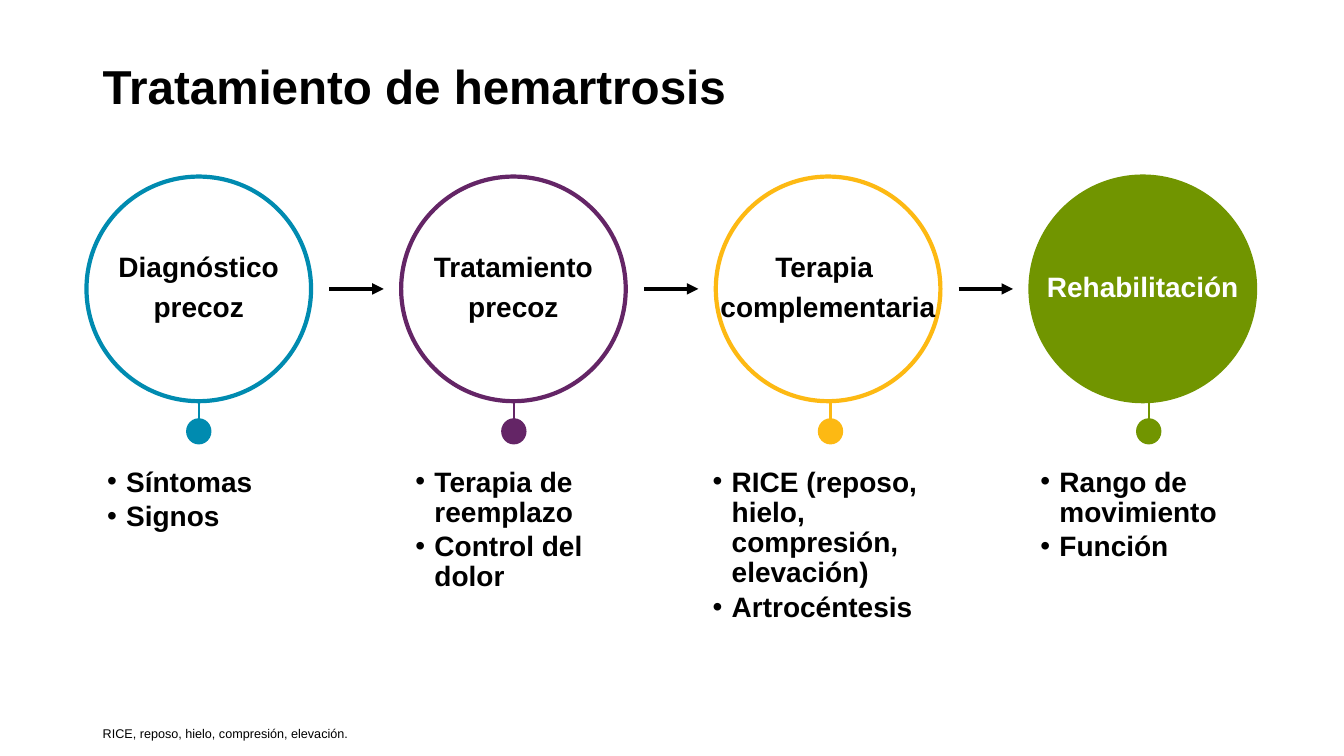
from lxml import etree
from pptx import Presentation
from pptx.dml.color import RGBColor
from pptx.enum.shapes import MSO_CONNECTOR, MSO_SHAPE
from pptx.enum.text import MSO_ANCHOR, PP_ALIGN
from pptx.oxml.ns import qn
from pptx.util import Cm, Pt

OVAL, RECTANGLE = MSO_SHAPE.OVAL, MSO_SHAPE.RECTANGLE
STRAIGHT = MSO_CONNECTOR.STRAIGHT
TOP, MIDDLE, BOTTOM = MSO_ANCHOR.TOP, MSO_ANCHOR.MIDDLE, MSO_ANCHOR.BOTTOM
LEFT, CENTER = PP_ALIGN.LEFT, PP_ALIGN.CENTER

# Content
TITLE = "Tratamiento de hemartrosis"
FOOTNOTE = "RICE, reposo, hielo, compresión, elevación."
# Lengths in cm: stem is the marker's centre, list_left and list_width its text
STEPS = [
    dict(label=["Diagnóstico", "precoz"], color="008BB0", filled=False,
         stem=5.01, list_left=2.34, list_width=5.66,
         items=["Síntomas", "Signos"]),
    dict(label=["Tratamiento", "precoz"], color="642566", filled=False,
         stem=12.95, list_left=10.11, list_width=5.66,
         items=["Terapia de reemplazo", "Control del dolor"]),
    dict(label=["Terapia ", "complementaria"], color="FDB913", filled=False,
         stem=20.93, list_left=17.6, list_width=6.65,
         items=["RICE (reposo, hielo, compresión, elevación)", "Artrocéntesis"]),
    dict(label=["Rehabilitación"], color="719500", filled=True,
         stem=28.95, list_left=25.86, list_width=5.66,
         items=["Rango de movimiento", "Función"]),
]

THEME = dict(font="Arial", text="000000", paper="FFFFFF",
             title=34, body=20, footnote=9)

# Layout in cm
CIRCLE_LEFT, CIRCLE_TOP, DIAMETER, PITCH = 2.18, 4.45, 5.66, 7.93
ARROW_GAP, ARROW_LENGTH = 0.46, 1.37
STEM_TOP, STEM_BOTTOM = 8.8, 10.8
DOT_TOP, DOT_WIDTH, DOT_HEIGHT = 10.54, 0.64, 0.66
LIST_TOP, LIST_HEIGHT = 11.43, 3.78
PADDING, BULLET_INDENT = 0.36, 0.48

presentation = Presentation()
presentation.slide_width, presentation.slide_height = Cm(33.87), Cm(19.05)
slide = presentation.slides.add_slide(presentation.slide_layouts[6])


def write(shape, lines, size, color=THEME["text"], bold=True, anchor=MIDDLE,
          align=LEFT, insets=(0.25, 0.13, 0.25, 0.13), wrap=True,
          spacing=None, after=0, bullets=False):
    frame = shape.text_frame
    frame.text = "\n".join(lines)
    frame.word_wrap, frame.vertical_anchor = wrap, anchor
    (frame.margin_left, frame.margin_top,
     frame.margin_right, frame.margin_bottom) = map(Cm, insets)
    for paragraph in frame.paragraphs:
        paragraph.alignment = align
        paragraph.line_spacing = spacing
        paragraph.space_after = Pt(after)
        if bullets:
            properties = paragraph._p.get_or_add_pPr()
            properties.set("marL", str(Cm(BULLET_INDENT)))
            properties.set("indent", str(-Cm(BULLET_INDENT)))
            etree.SubElement(properties, qn("a:buFont")).set("typeface", THEME["font"])
            etree.SubElement(properties, qn("a:buChar")).set("char", "•")
        for run in paragraph.runs:
            run.font.name, run.font.size, run.font.bold = THEME["font"], Pt(size), bold
            run.font.color.rgb = RGBColor.from_string(color)


def add_text(left, top, width, height, lines, size, **style):
    box = slide.shapes.add_textbox(Cm(left), Cm(top), Cm(width), Cm(height))
    write(box, lines, size, **style)


def add_figure(kind, left, top, width, height, fill, line=None, line_width=1):
    shape = slide.shapes.add_shape(kind, Cm(left), Cm(top), Cm(width), Cm(height))
    shape.shadow.inherit = False
    shape.fill.solid()
    shape.fill.fore_color.rgb = RGBColor.from_string(fill)
    if line:
        shape.line.color.rgb = RGBColor.from_string(line)
        shape.line.width = Pt(line_width)
    else:
        shape.line.fill.background()
    return shape


def add_line(x1, y1, x2, y2, color, width, arrow=False):
    line = slide.shapes.add_connector(STRAIGHT, Cm(x1), Cm(y1), Cm(x2), Cm(y2))
    line.line.color.rgb = RGBColor.from_string(color)
    line.line.width = Pt(width)
    if arrow:
        etree.SubElement(line.line._get_or_add_ln(), qn("a:tailEnd")).set("type", "triangle")
    etree.SubElement(line._element.spPr, qn("a:effectLst"))


# Title and footnote
add_text(2.34, 0.64, 29.21, 3.02, [TITLE], THEME["title"])
add_text(2.34, 17.65, 27.56, 1.02, [FOOTNOTE], THEME["footnote"], bold=False,
         anchor=BOTTOM, insets=(0.25, 0.13, 0.25, 0))

for index, step in enumerate(STEPS):
    circle_left = CIRCLE_LEFT + index * PITCH
    color = step["color"]

    # Stem, circle and dot
    add_line(step["stem"], STEM_TOP, step["stem"], STEM_BOTTOM, color, 1.75)
    circle = add_figure(OVAL, circle_left, CIRCLE_TOP, DIAMETER, DIAMETER,
                        color if step["filled"] else THEME["paper"], color, 3)
    write(circle, step["label"], THEME["body"],
          color=THEME["paper"] if step["filled"] else THEME["text"],
          align=CENTER, insets=(0, PADDING, 0, PADDING), wrap=False,
          spacing=0.9, after=7)
    add_figure(OVAL, step["stem"] - DOT_WIDTH / 2, DOT_TOP, DOT_WIDTH, DOT_HEIGHT, color)

    # Bulleted list
    panel = add_figure(RECTANGLE, step["list_left"], LIST_TOP, step["list_width"],
                       LIST_HEIGHT, THEME["paper"], THEME["paper"])
    write(panel, step["items"], THEME["body"], anchor=TOP, insets=(PADDING,) * 4,
          spacing=0.9, after=3, bullets=True)

    # Arrow to the next step
    if index < len(STEPS) - 1:
        arrow_left = circle_left + DIAMETER + ARROW_GAP
        arrow_y = CIRCLE_TOP + DIAMETER / 2
        add_line(arrow_left, arrow_y, arrow_left + ARROW_LENGTH, arrow_y,
                 THEME["text"], 2.75, arrow=True)

presentation.save("out.pptx")
